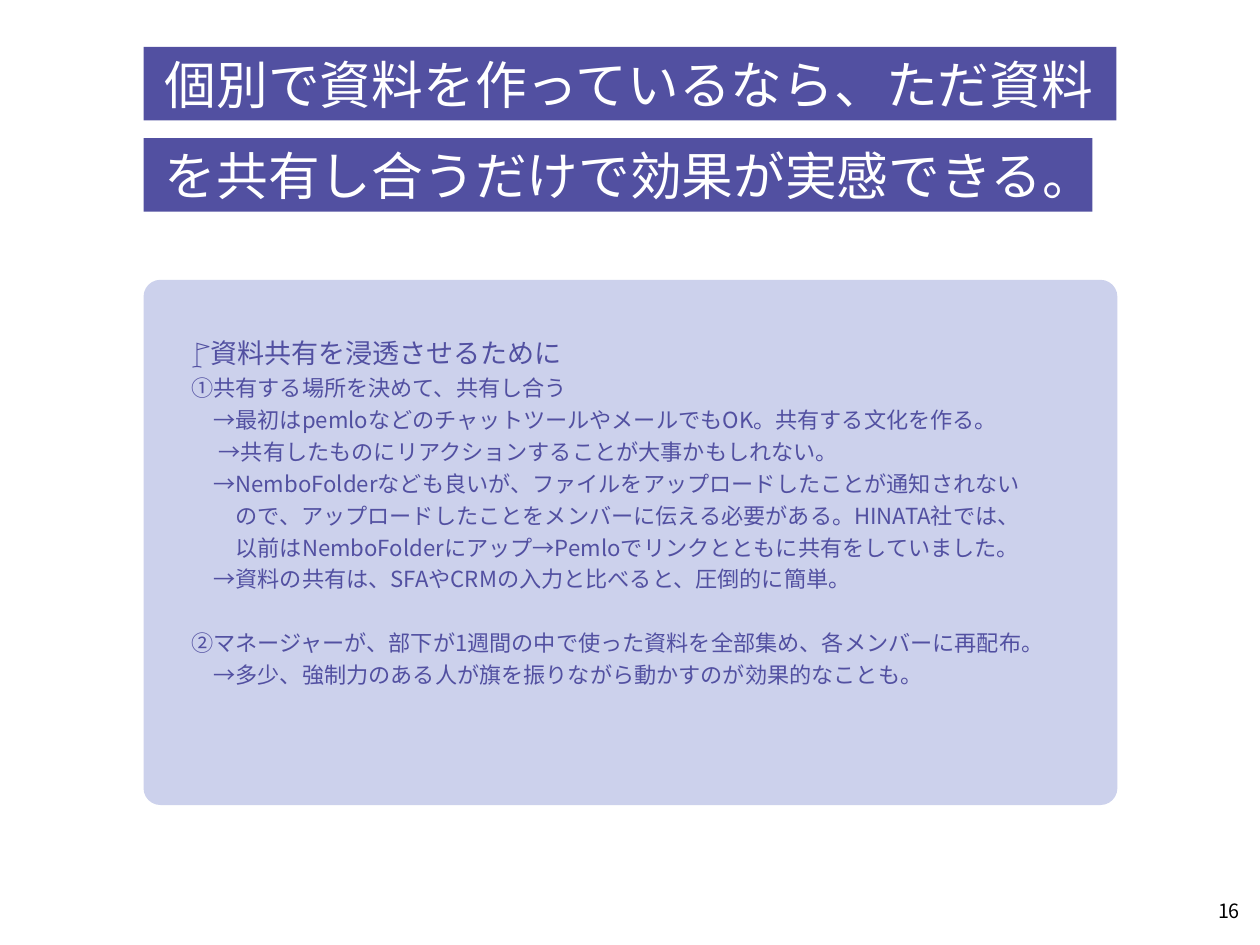
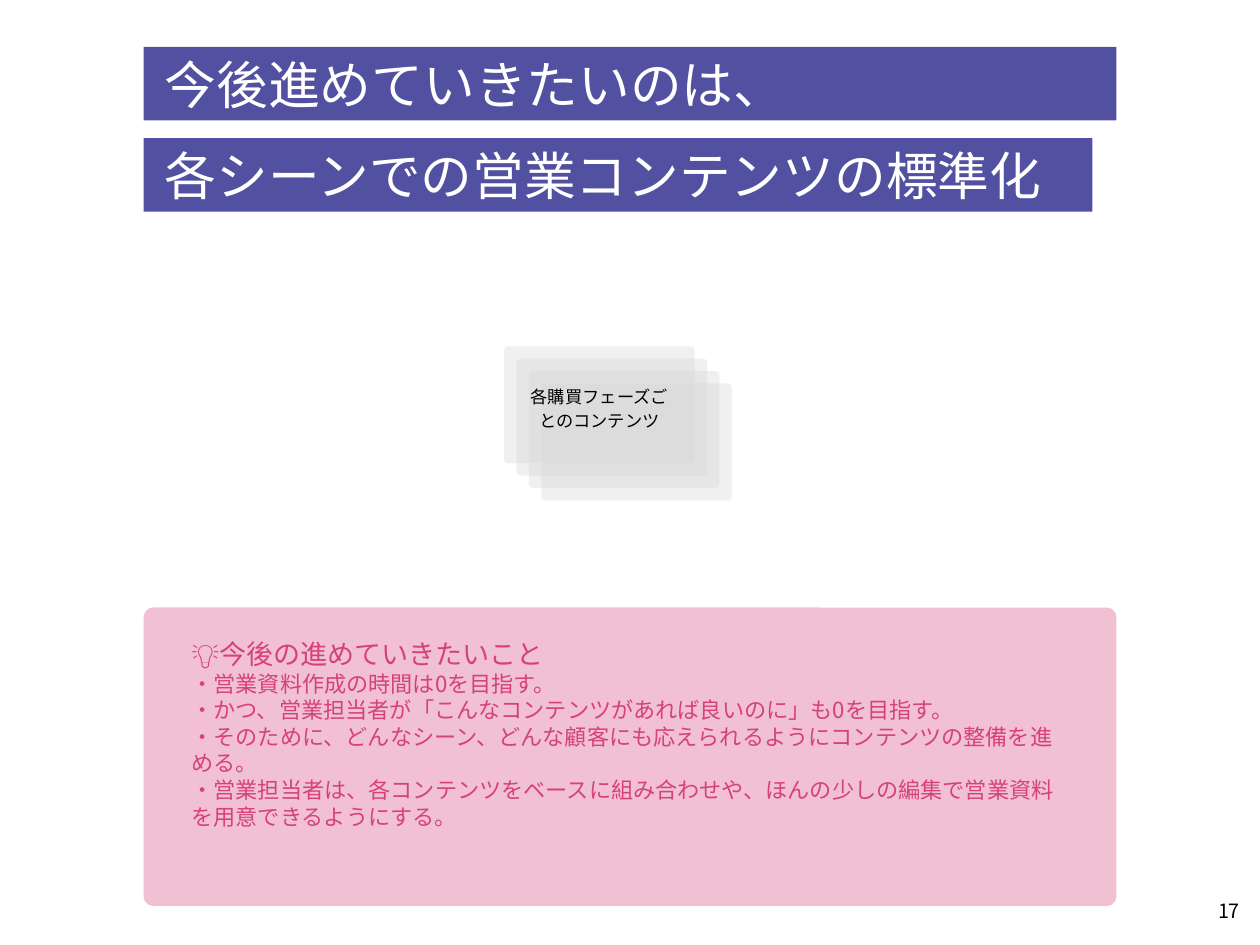
"""Builds two slides on sharing and standardising sales material."""
from dataclasses import dataclass
from typing import Optional

from lxml.etree import SubElement
from pptx import Presentation
from pptx.dml.color import RGBColor
from pptx.enum.shapes import MSO_SHAPE
from pptx.enum.text import MSO_ANCHOR, MSO_AUTO_SIZE, PP_ALIGN
from pptx.oxml.ns import qn
from pptx.util import Inches, Pt


@dataclass(frozen=True)
class Theme:
    font: str = "Noto Sans CJK JP"
    indigo: str = "5250A1"
    lavender: str = "CCD1EC"
    pink: str = "D64278"
    grey: str = "D6D5D5"
    white: str = "FFFFFF"
    black: str = "000000"
    title_size: float = 42
    heading_size: float = 22
    body_size: float = 18
    number_size: float = 16
    label_size: float = 14
    title_gap: float = 23.5
    section_gap: float = 26


@dataclass(frozen=True)
class Area:
    left: float
    top: float
    width: float
    height: float

    def lengths(self) -> tuple:
        return tuple(Inches(n) for n in (self.left, self.top, self.width, self.height))


@dataclass(frozen=True)
class Line:
    text: str
    size: float
    indent: float = 0
    before: float = 0


THEME = Theme()
BANDS = (Area(1.62, 0.53, 10.98, 0.83), Area(1.62, 1.56, 10.71, 0.83))
TITLE_AREA = Area(1.82, 0.53, 10.78, 1.86)
NUMBER_AREA = Area(13.68, 10.09, 0.38, 0.33)
SHEET_COUNT, SHEET_STEP = 4, 0.14
ARROW_INDENT, WRAP_INDENT = 0.25, 0.5


def body(text: str, indent: float = 0, before: float = 0) -> Line:
    return Line(text, THEME.body_size, indent, before)


SHARING_LINES = (
    Line("🚩資料共有を浸透させるために", THEME.heading_size),
    body("①共有する場所を決めて、共有し合う"),
    body("→最初はpemloなどのチャットツールやメールでもOK。共有する文化を作る。", ARROW_INDENT),
    body("→共有したものにリアクションすることが大事かもしれない。", 0.31),
    body("→NemboFolderなども良いが、ファイルをアップロードしたことが通知されない", ARROW_INDENT),
    body("ので、アップロードしたことをメンバーに伝える必要がある。HINATA社では、", WRAP_INDENT),
    body("以前はNemboFolderにアップ→Pemloでリンクとともに共有をしていました。", WRAP_INDENT),
    body("→資料の共有は、SFAやCRMの入力と比べると、圧倒的に簡単。", ARROW_INDENT),
    body("②マネージャーが、部下が1週間の中で使った資料を全部集め、各メンバーに再配布。",
         before=THEME.section_gap),
    body("→多少、強制力のある人が旗を振りながら動かすのが効果的なことも。", ARROW_INDENT),
)
PLAN_LINES = (
    Line("💡今後の進めていきたいこと", THEME.heading_size),
    body("・営業資料作成の時間は0を目指す。"),
    body("・かつ、営業担当者が「こんなコンテンツがあれば良いのに」も0を目指す。"),
    body("・そのために、どんなシーン、どんな顧客にも応えられるようにコンテンツの整備を進める。"),
    body("・営業担当者は、各コンテンツをベースに組み合わせや、ほんの少しの編集で営業資料を用意できるようにする。"),
)


def write_lines(frame, lines, color: str, margin: float, align=PP_ALIGN.LEFT,
                spacing: float = 1.0, wrap: bool = True) -> None:
    frame.word_wrap = wrap
    frame.auto_size = MSO_AUTO_SIZE.NONE
    frame.margin_left = frame.margin_right = Inches(margin)
    frame.margin_top = frame.margin_bottom = Inches(margin)
    for index, line in enumerate(lines):
        para = frame.add_paragraph() if index else frame.paragraphs[0]
        para.alignment = align
        para.line_spacing = spacing
        para.space_before = Pt(line.before)
        if line.indent:
            para._p.get_or_add_pPr().set("marL", str(Inches(line.indent)))
        span = para.add_run()
        span.text = line.text
        span.font.size = Pt(line.size)
        span.font.color.rgb = RGBColor.from_string(color)
        span.font.name = THEME.font
        SubElement(span._r.get_or_add_rPr(), qn("a:ea"), typeface=THEME.font)


def add_text(page, area: Area, lines, color: str, margin: float = 0.06, **options) -> None:
    box = page.shapes.add_textbox(*area.lengths())
    write_lines(box.text_frame, lines, color, margin, **options)


def add_panel(page, area: Area, color: str, corner: Optional[float] = None,
              opacity: int = 100) -> None:
    kind = MSO_SHAPE.RECTANGLE if corner is None else MSO_SHAPE.ROUNDED_RECTANGLE
    panel = page.shapes.add_shape(kind, *area.lengths())
    if corner is not None:
        panel.adjustments[0] = corner
    panel.shadow.inherit = False
    panel.line.fill.background()
    panel.fill.solid()
    panel.fill.fore_color.rgb = RGBColor.from_string(color)
    if opacity < 100:
        tone = panel._element.spPr.find(f"{qn('a:solidFill')}/{qn('a:srgbClr')}")
        SubElement(tone, qn("a:alpha"), val=str(opacity * 1000))


def add_page(deck, number: int, first: str, second: str):
    page = deck.slides.add_slide(deck.slide_layouts[5])
    for band in BANDS:
        add_panel(page, band, THEME.indigo)
    title = page.shapes.title
    title.left, title.top, title.width, title.height = TITLE_AREA.lengths()
    page.shapes._spTree.append(title._element)
    title.text_frame.vertical_anchor = MSO_ANCHOR.MIDDLE
    lines = (Line(first, THEME.title_size),
             Line(second, THEME.title_size, before=THEME.title_gap))
    write_lines(title.text_frame, lines, THEME.white, 0.04)
    add_text(page, NUMBER_AREA, [Line(str(number), THEME.number_size)], THEME.black,
             align=PP_ALIGN.CENTER, wrap=False)
    return page


def build_sharing(deck) -> None:
    page = add_page(deck, 16, "個別で資料を作っているなら、ただ資料",
                    "を共有し合うだけで効果が実感できる。")
    add_panel(page, Area(1.62, 3.16, 10.99, 5.93), THEME.lavender, 0.032)
    add_text(page, Area(2.1, 3.67, 10.03, 4.84), SHARING_LINES, THEME.indigo, spacing=1.2)


def build_plan(deck) -> None:
    page = add_page(deck, 17, "今後進めていきたいのは、", "各シーンでの営業コンテンツの標準化")
    for index in range(SHEET_COUNT):
        shift = index * SHEET_STEP
        add_panel(page, Area(5.69 + shift, 3.91 + shift, 2.15, 1.32), THEME.grey, 0.035, 35)
    add_text(page, Area(5.88, 4.25, 1.77, 0.64),
             [Line("各購買フェーズごとのコンテンツ", THEME.label_size)], THEME.black,
             align=PP_ALIGN.CENTER, spacing=1.2)
    add_panel(page, Area(1.62, 6.86, 10.98, 3.37), THEME.pink, 0.032, 33)
    add_text(page, Area(2.12, 7.16, 9.98, 2.78), PLAN_LINES, THEME.pink, 0.04)


def main() -> None:
    deck = Presentation()
    deck.slide_width, deck.slide_height = Inches(14.22), Inches(10.67)
    build_sharing(deck)
    build_plan(deck)
    deck.save("out.pptx")


if __name__ == "__main__":
    main()
